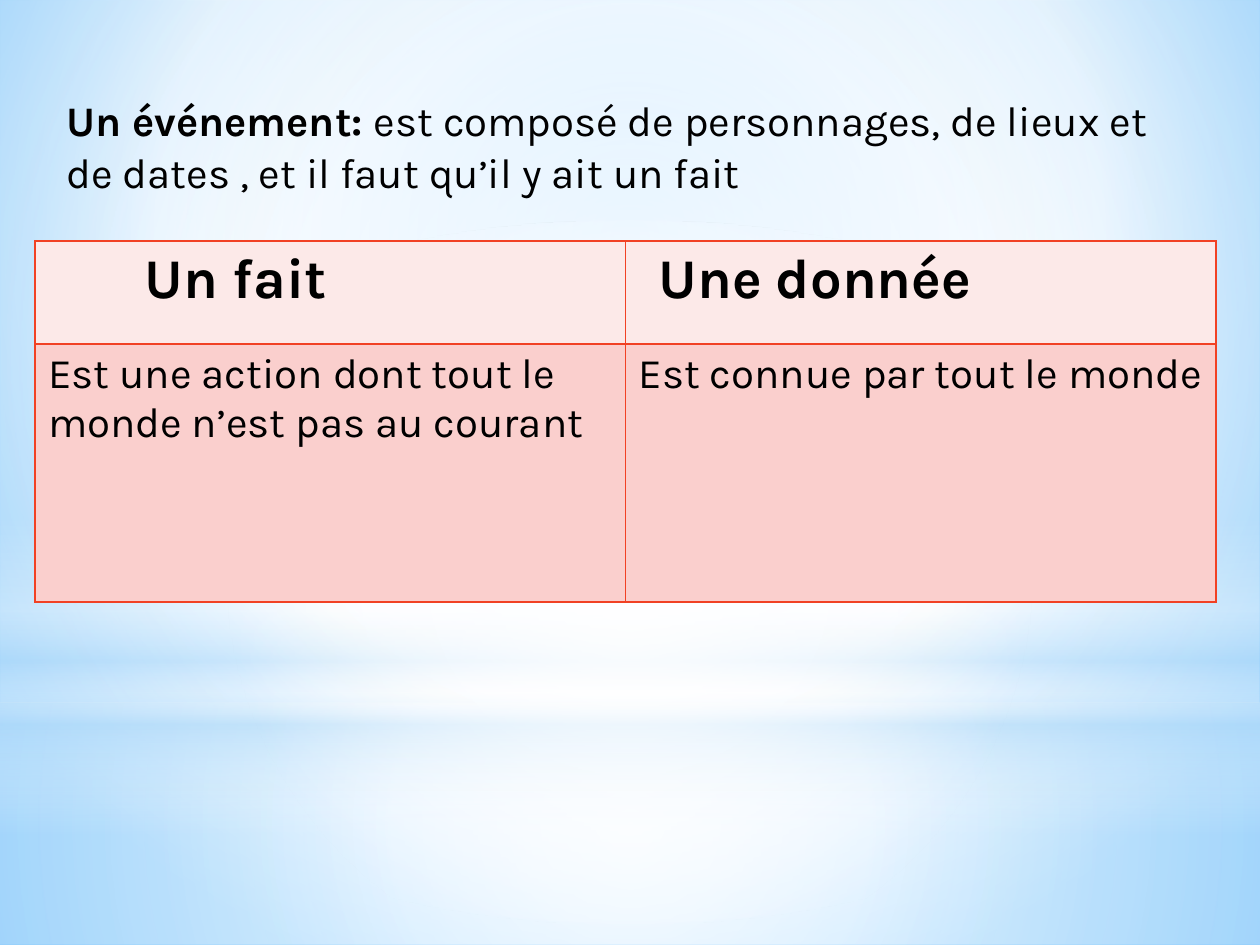
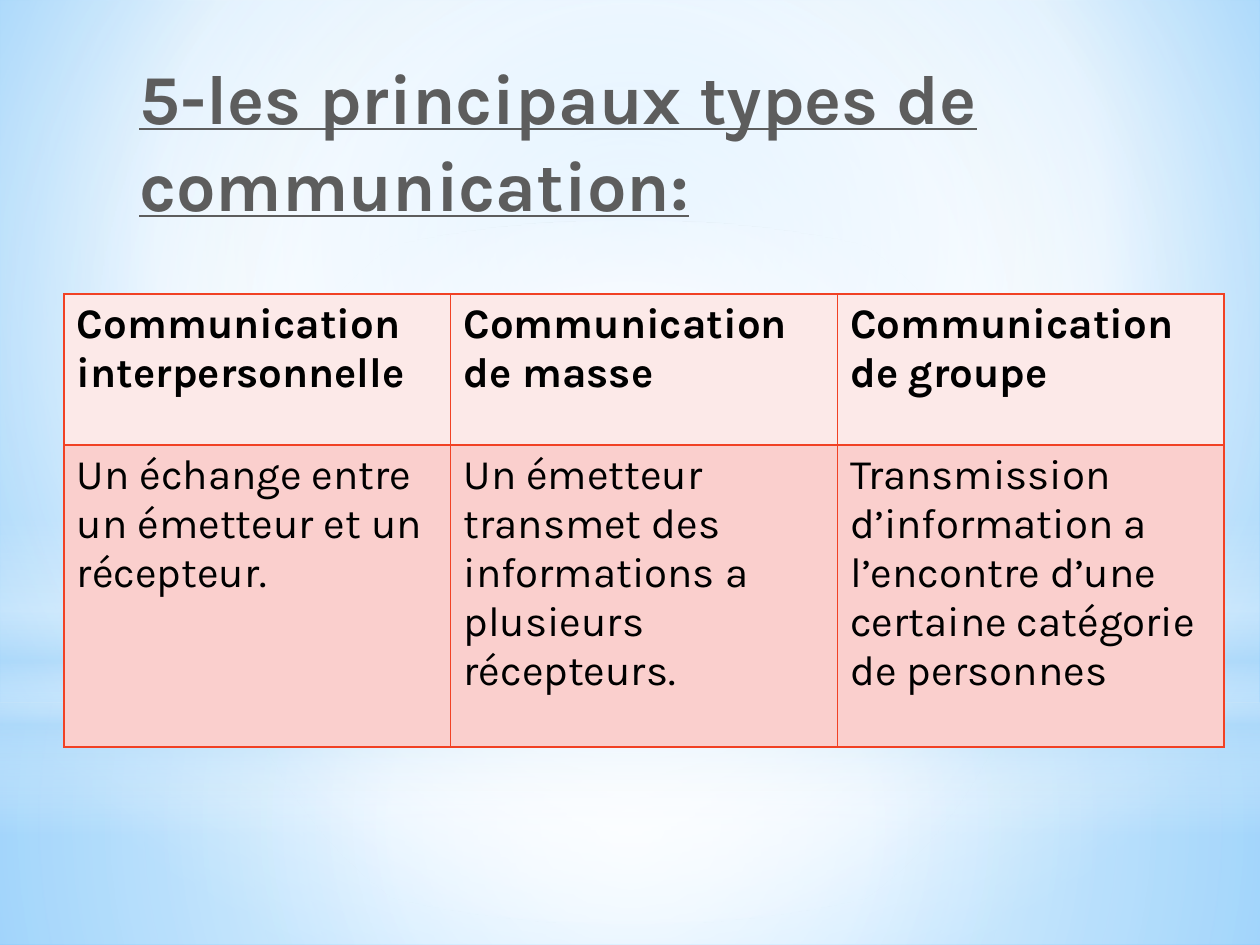
from lxml.etree import SubElement as Sub
from pptx import Presentation
from pptx.dml.color import RGBColor as Rgb
from pptx.enum.shapes import MSO_SHAPE as Shape
from pptx.enum.text import MSO_AUTO_SIZE as Fit
from pptx.oxml.ns import qn
from pptx.oxml.xmlchemy import OxmlElement as Element
from pptx.util import Pt

SCALE = 914400 / 126
WIDE, HIGH = 1260, 945
FONT = "Karla"
BLACK, GREY, RED = "000000", "5D5D5D", "F14124"
ROSE, PINK = "FCE9E8", "FACFCD"
WHITE, SKY = "FFFFFF", "B4DCFA"
INSET = 13
MID = (50, 50, 50, 50)
SPACE = [("9ED5FF", 0, 100), (WHITE, 60, 100), ("5BB9FF", 100, 100)]
FLOOR = [(WHITE, 0, 91), (WHITE, 37, 76), (SKY, 100, 79)]
WALL = [(WHITE, 0, 89), (WHITE, 48, 62), (SKY, 100, 79)]
BAND = [(WHITE, 0, 0), (WHITE, 29, 30), (SKY, 45, 40),
        (WHITE, 55, 26), (SKY, 65, 60), (WHITE, 100, 0)]
GLOW = [(WHITE, 0, 100), (WHITE, 56, 0)]
LAYERS = [
    (Shape.RECTANGLE, 703, 242, FLOOR, MID),
    (Shape.RECTANGLE, 0, 703, WALL, MID),
    (Shape.RECTANGLE, 519, 315, BAND, None),
    (Shape.OVAL, 221, 703, GLOW, MID),
]


def px(count):
    return round(count * SCALE)


def tint(code):
    return Rgb.from_string(code)


def blend(fill, owner, stops, focus):
    fill.solid()
    grad = Element("a:gradFill")
    grad.set("rotWithShape", "1")
    ramp = Sub(grad, qn("a:gsLst"))
    for code, place, solid in stops:
        stop = Sub(ramp, qn("a:gs"), pos=str(place * 1000))
        shade = Sub(stop, qn("a:srgbClr"), val=code)
        if solid < 100:
            Sub(shade, qn("a:alpha"), val=str(solid * 1000))
    if focus:
        ring = Sub(grad, qn("a:path"))
        ring.set("path", "circle")
        sides = {side: str(part * 1000) for side, part in zip("ltrb", focus)}
        Sub(ring, qn("a:fillToRect"), **sides)
    else:
        Sub(grad, qn("a:lin"), ang="5400000", scaled="0")
    plain = next(owner.iter(qn("a:solidFill")))
    plain.getparent().replace(plain, grad)


def layer(slide, kind, top, high, stops, focus):
    shape = slide.shapes.add_shape(kind, 0, px(top), px(WIDE), px(high))
    shape.shadow.inherit = False
    shape.line.fill.background()
    blend(shape.fill, shape._element.spPr, stops, focus)


def page(deck):
    slide = deck.slides.add_slide(deck.slide_layouts[6])
    for item in LAYERS:
        layer(slide, *item)
    return slide


def write(para, words, size, bold=False, color=BLACK, under=False):
    run = para.add_run()
    run.text = words
    font = run.font
    font.name, font.size, font.bold = FONT, Pt(size), bold
    font.color.rgb = tint(color)
    if under:
        font.underline = True


def textbox(slide, left, top, wide, high):
    box = slide.shapes.add_textbox(px(left), px(top), px(wide), px(high))
    frame = box.text_frame
    frame.word_wrap = True
    frame.auto_size = Fit.SHAPE_TO_FIT_TEXT
    para = frame.paragraphs[0]
    para.line_spacing = 1.04
    return para


def border(cell):
    props = cell._tc.get_or_add_tcPr()
    for spot, side in enumerate("LRTB"):
        line = Element(f"a:ln{side}")
        line.set("w", str(Pt(1)))
        Sub(Sub(line, qn("a:solidFill")), qn("a:srgbClr"), val=RED)
        props.insert(spot, line)


def grid(slide, left, top, wide, highs, rows, size=24, shifts=(0, 0, 0)):
    count = len(rows[0])
    frame = slide.shapes.add_table(len(rows), count, px(left), px(top),
                                   px(wide), px(sum(highs)))
    table = frame.table
    table.first_row = table.horz_banding = False
    for col in table.columns:
        col.width = px(wide / count)
    for i, row in enumerate(rows):
        head = i == 0
        table.rows[i].height = px(highs[i])
        for j, words in enumerate(row):
            cell = table.cell(i, j)
            cell.fill.solid()
            cell.fill.fore_color.rgb = tint(ROSE if head else PINK)
            border(cell)
            cell.margin_left = px(INSET + (shifts[j] if head else 0))
            write(cell.text_frame.paragraphs[0], words,
                  size if head else 24, head)


def event(deck):
    slide = page(deck)
    para = textbox(slide, 54, 86, 1131, 115)
    write(para, "Un événement: ", 24, True)
    write(para, "est composé de personnages, de lieux et de dates , "
                "et il faut qu’il y ait un fait", 24)
    grid(slide, 35, 241, 1181, (103, 258), [
        ("Un fait", "Une donnée"),
        ("Est une action dont tout le monde n’est pas au courant",
         "Est connue par tout le monde"),
    ], 32, (97, 20))


def types(deck):
    slide = page(deck)
    para = textbox(slide, 64, 45, 1160, 183)
    props = para._p.get_or_add_pPr()
    props.set("marL", str(px(63)))
    props.set("indent", "0")
    write(para, "5-les principaux types de communication:", 40, True, GREY, True)
    grid(slide, 64, 294, 1160, (151, 302), [
        ("Communication interpersonnelle", "Communication de masse",
         "Communication de groupe"),
        ("Un échange entre un émetteur et un récepteur.",
         "Un émetteur transmet des informations a plusieurs récepteurs.",
         "Transmission d’information a l’encontre d’une certaine "
         "catégorie de personnes"),
    ])


def main():
    deck = Presentation()
    deck.slide_width, deck.slide_height = px(WIDE), px(HIGH)
    ground = deck.slide_master.background
    blend(ground.fill, deck.slide_master._element, SPACE, (20, 10, 20, 60))
    event(deck)
    types(deck)
    deck.save("out.pptx")


if __name__ == "__main__":
    main()
